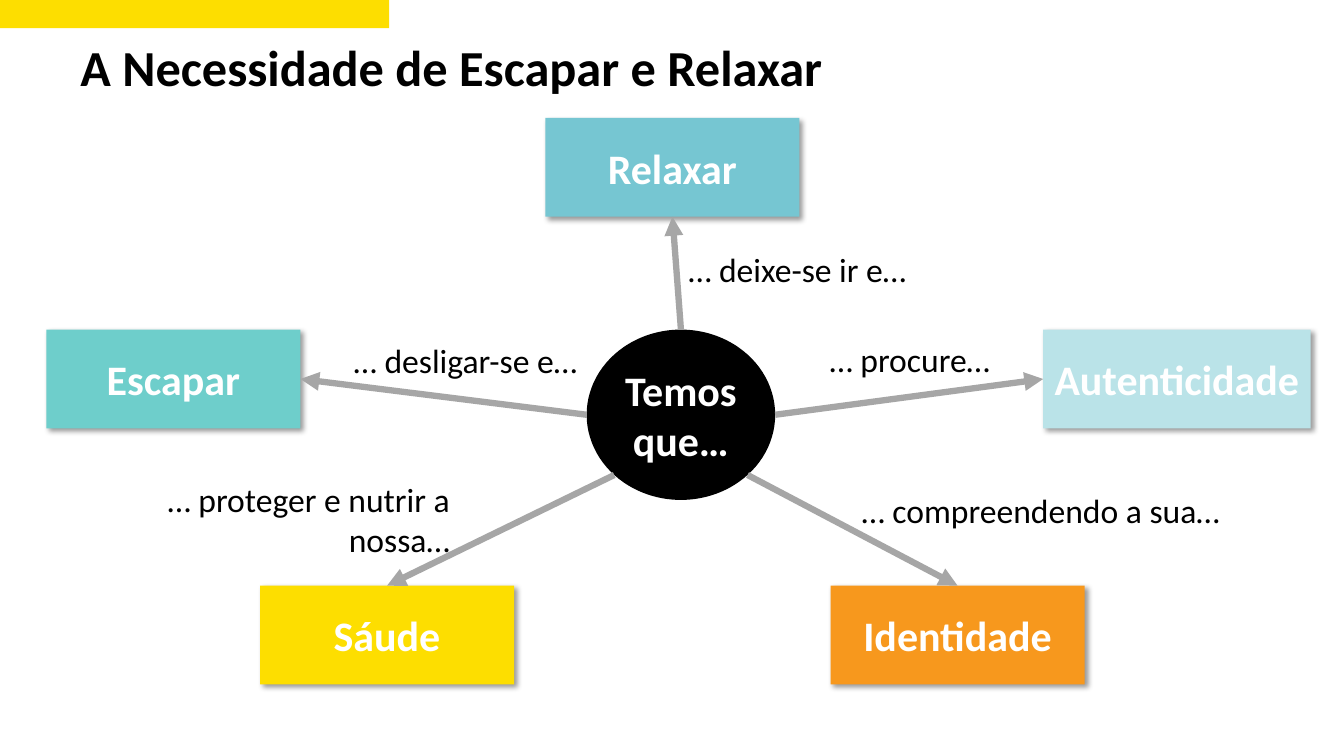
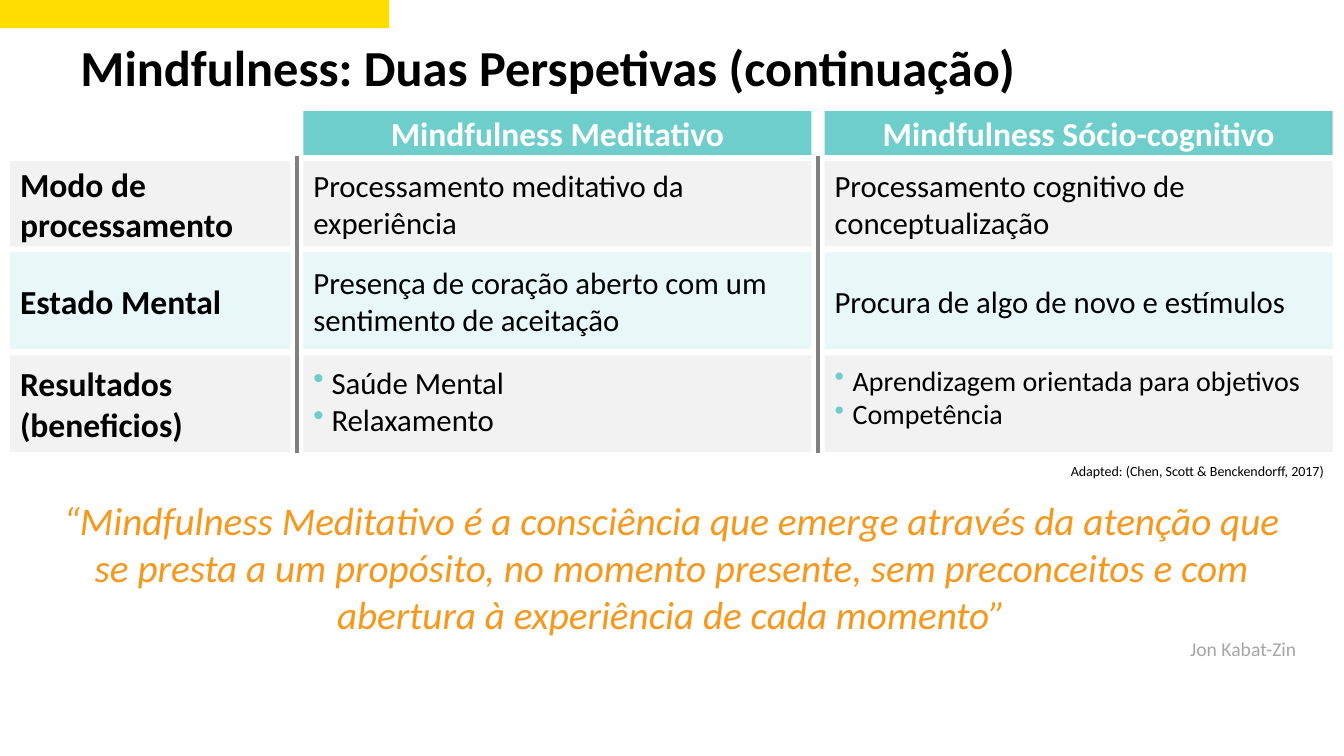
import math
from lxml import etree
from pptx import Presentation, util as u
from pptx.dml.color import RGBColor
from pptx.enum import shapes, text
from pptx.oxml import parse_xml
from pptx.oxml.ns import qn

NS = 'xmlns:a="http://schemas.openxmlformats.org/drawingml/2006/main"'
FONT = "Calibri"
TEAL, YELLOW, ORANGE = "6ECECB", "FDDE00", "F7981D"
BLACK, WHITE, GREY, DARK = "000000", "FFFFFF", "A6A6A6", "808080"
STRIPES = ["F2F2F2", "E8F8F8"]
LEFT, CENTER, RIGHT = text.PP_ALIGN.LEFT, text.PP_ALIGN.CENTER, text.PP_ALIGN.RIGHT
TOP, MIDDLE = text.MSO_ANCHOR.TOP, text.MSO_ANCHOR.MIDDLE
RECT, OVAL = shapes.MSO_SHAPE.RECTANGLE, shapes.MSO_SHAPE.OVAL
SHADOW = (f'<a:effectLst {NS}><a:outerShdw blurRad="50800" dist="38100" dir="2700000" '
          'algn="tl" rotWithShape="0"><a:srgbClr val="000000"><a:alpha val="40000"/>'
          '</a:srgbClr></a:outerShdw></a:effectLst>')

prs = Presentation()
prs.slide_width, prs.slide_height = u.Inches(13.333), u.Inches(7.5)
# One column and one row are a hundredth of the slide's width and height
COL, ROW = prs.slide_width / 100, prs.slide_height / 100


def put(s, at, words="", fill=None, kind=RECT, size=24, color=BLACK, bold=False,
        italic=False, align=LEFT, anchor=TOP, bullet=None, shadow=False,
        spacing=None, inset=0.05):
    """Place a text box, or a filled shape, with one paragraph for each line."""
    x, y, w, h = (int(v * unit) for v, unit in zip(at, (COL, ROW, COL, ROW)))
    if fill:
        sp = s.shapes.add_shape(kind, x, y, w, h)
        sp.shadow.inherit = False
        sp.fill.solid()
        sp.fill.fore_color.rgb = RGBColor.from_string(fill)
        sp.line.fill.background()
    else:
        sp = s.shapes.add_textbox(x, y, w, h)
    if shadow:
        pr = sp._element.spPr
        pr.replace(pr.find(qn("a:effectLst")), parse_xml(SHADOW))
    tf = sp.text_frame
    tf.word_wrap, tf.vertical_anchor = True, anchor
    tf.margin_top = u.Inches(inset)
    for i, line in enumerate(words.split("\n") if words else []):
        p = tf.add_paragraph() if i else tf.paragraphs[0]
        p.alignment = align
        if spacing:
            p.line_spacing = spacing
        if bullet:
            ppr = p._p.get_or_add_pPr()
            indent = u.Inches(0.18)
            ppr.set("marL", str(indent))
            ppr.set("indent", str(-indent))
            ppr.append(parse_xml(f'<a:buClr {NS}><a:srgbClr val="{bullet}"/></a:buClr>'))
            ppr.append(parse_xml(f'<a:buChar {NS} char="•"/>'))
        r = p.add_run()
        r.text = line
        r.font.name, r.font.size = FONT, u.Pt(size)
        r.font.bold, r.font.italic = bold, italic
        r.font.color.rgb = RGBColor.from_string(color)
    return sp


def link(s, x1, y1, x2, y2, color, width, target=None, site=0):
    """Draw a line; with a target, glue its arrowhead to that shape."""
    ln = s.shapes.add_connector(shapes.MSO_CONNECTOR.STRAIGHT,
                                *(int(v) for v in (x1, y1, x2, y2)))
    ln.line.color.rgb = RGBColor.from_string(color)
    ln.line.width = u.Pt(width)
    if target is not None:
        ln.end_connect(target, site)
        etree.SubElement(ln.line._get_or_add_ln(), qn("a:tailEnd"), type="triangle")
    etree.SubElement(ln._element.spPr, qn("a:effectLst"))


# Shared band and title
slides = []
for title in ["A Necessidade de Escapar e Relaxar",
              "Mindfulness: Duas Perspetivas (continuação)"]:
    s = prs.slides.add_slide(prs.slide_layouts[6])
    put(s, (0, 0, 28.95, 3.73), fill=YELLOW)
    put(s, (5.25, 5.07, 84, 10.13), title, size=36, bold=True, spacing=0.9)
    slides.append(s)
needs, views = slides

# Slide 1: hub with five needs; angle is where the arrow leaves the hub,
# site is the side of the need it reaches (0 top, 1 left, 2 bottom, 3 right)
node = dict(size=30, color=WHITE, bold=True, align=CENTER, anchor=MIDDLE)
hub = put(needs, (43.65, 43.6, 14.03, 22.53), "Temos que…", BLACK, OVAL, **node)
rx, ry = hub.width / 2, hub.height / 2
cx, cy = hub.left + rx, hub.top + ry
for name, x, y, w, fill, angle, site in [
        ("Escapar", 3.45, 43.6, 18.9, TEAL, 180, 3),
        ("Relaxar", 40.58, 15.6, 18.9, "76C6D2", 270, 2),
        ("Autenticidade", 77.62, 43.6, 19.9, "BAE3E8", 0, 1),
        ("Identidade", 61.8, 77.47, 18.9, ORANGE, 45, 0),
        ("Sáude", 19.35, 77.47, 18.9, YELLOW, 135, 0)]:
    need = put(needs, (x, y, w, 13.07), name, fill, shadow=True, **node)
    a = math.radians(angle)
    link(needs, cx + rx * math.cos(a), cy + ry * math.sin(a), cx, cy,
         GREY, 4.5, need, site)

# Arrow labels
for words, at, align in [
        ("… deixe-se ir e…", (50.48, 32.27, 18.2, 6.67), LEFT),
        ("… desligar-se e…", (25.58, 44.27, 18.7, 6.67), LEFT),
        ("… procure…", (60.15, 44.13, 14.25, 6.67), RIGHT),
        ("… compreendendo a sua…", (63.38, 64.13, 29.25, 6.67), LEFT),
        ("… proteger e nutrir a nossa…", (4.8, 62.67, 29.4, 12.13), RIGHT)]:
    put(needs, at, words, align=align)

# Slide 2: comparison grid
widths, heights = [20.85, 37.8, 37.8], [5.8, 11.3, 12.8, 12.8]
gap_x, gap_y = 0.98, 0.8
lefts = [0.75 + sum(widths[:i]) + i * gap_x for i in range(len(widths))]
tops = [14.7 + sum(heights[:i]) + i * gap_y for i in range(len(heights))]
rows = [
    ["", "Mindfulness Meditativo", "Mindfulness Sócio-cognitivo"],
    ["Modo de processamento", "Processamento meditativo da experiência",
     "Processamento cognitivo de conceptualização"],
    ["Estado Mental", "Presença de coração aberto com um sentimento de aceitação",
     "Procura de algo de novo e estímulos"],
    ["Resultados (beneficios)", "Saúde Mental\nRelaxamento",
     "Aprendizagem orientada para objetivos\nCompetência"]]
for i, row in enumerate(rows):
    for j, words in enumerate(row):
        if not words:
            continue
        if i == 0:
            fmt = dict(fill=TEAL, color=WHITE, bold=True, align=CENTER, anchor=MIDDLE)
        elif j == 0:
            fmt = dict(fill=STRIPES[(i - 1) % 2], bold=True, anchor=MIDDLE)
        elif "\n" in words:
            fmt = dict(fill=STRIPES[(i - 1) % 2], size=24 - 2 * j, bullet=TEAL, inset=0.08)
        else:
            fmt = dict(fill=STRIPES[(i - 1) % 2], size=22, anchor=MIDDLE)
        put(views, (lefts[j], tops[i], widths[j], heights[i]), words, **fmt)

# Column dividers, centred in the gaps
for left in lefts[1:]:
    x = (left - gap_x / 2) * COL
    link(views, x, 20.6 * ROW, x, 59.9 * ROW, DARK, 3)

# Source and quotation
put(views, (76.88, 60.53, 22.35, 3.6), "Adapted: (Chen, Scott & Benckendorff, 2017)",
    size=10, align=RIGHT)
quote = put(views, (2.7, 64.93, 94.5, 24.27),
            "“Mindfulness Meditativo é a consciência que emerge através da atenção que "
            "se presta a um propósito, no momento presente, sem preconceitos e com "
            "abertura à experiência de cada momento”\nJon Kabat-Zin",
            size=28, color=ORANGE, italic=True, align=CENTER)
p = quote.text_frame.paragraphs[1]
p.alignment = RIGHT
r = p.runs[0]
r.font.size, r.font.italic = u.Pt(14), False
r.font.color.rgb = RGBColor.from_string(GREY)

prs.save("out.pptx")
